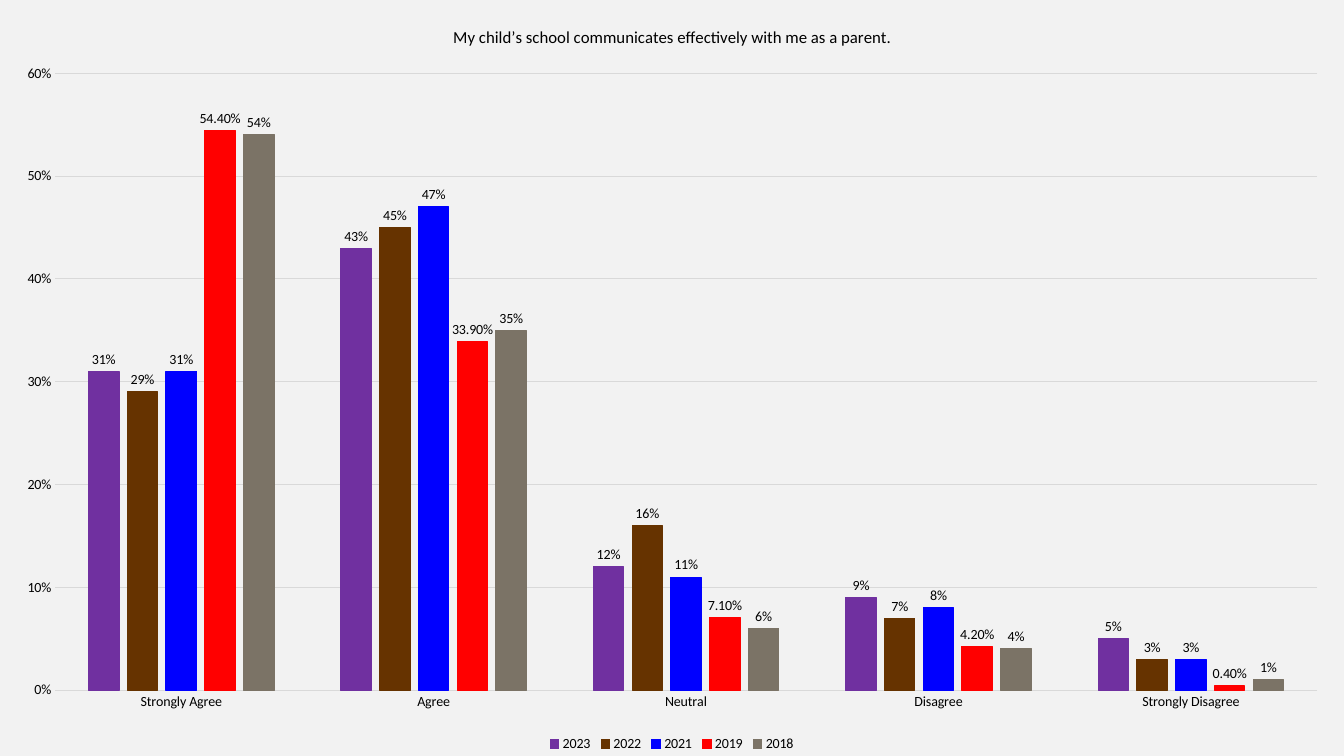
import pptx
import pptx.chart.data
import pptx.dml.color
import pptx.enum.chart
import pptx.oxml
import pptx.oxml.ns
import pptx.util
from pptx.util import Inches

RGBColor = pptx.dml.color.RGBColor
BACKGROUND = RGBColor(0xF2, 0xF2, 0xF2)
BLACK = RGBColor(0x00, 0x00, 0x00)
GRID = RGBColor(0xD9, 0xD9, 0xD9)
PURPLE = RGBColor(0x70, 0x30, 0xA0)
BROWN = RGBColor(0x66, 0x33, 0x00)
BLUE = RGBColor(0x00, 0x00, 0xFF)
RED = RGBColor(0xFF, 0x00, 0x00)
TAUPE = RGBColor(0x7B, 0x73, 0x66)

QUESTION = "My child’s school communicates effectively with me as a parent."
ANSWERS = ["Strongly Agree", "Agree", "Neutral", "Disagree", "Strongly Disagree"]
# Year, share of each answer, colour, label format
YEARS = [
    ("2023", [0.31, 0.43, 0.12, 0.09, 0.05], PURPLE, "0%"),
    ("2022", [0.29, 0.45, 0.16, 0.07, 0.03], BROWN, "0%"),
    ("2021", [0.31, 0.47, 0.11, 0.08, 0.03], BLUE, "0%"),
    ("2019", [0.544, 0.339, 0.071, 0.042, 0.004], RED, "0.00%"),
    ("2018", [0.54, 0.35, 0.06, 0.04, 0.01], TAUPE, "0%"),
]


def format_font(font, size=10, color=BLACK, bold=False):
    font.name = "Calibri"
    font.size = pptx.util.Pt(size)
    font.bold = bold
    font.color.rgb = color


def write_text(frame, text, **font_format):
    run = frame.paragraphs[0].add_run()
    run.text = text
    format_font(run.font, **font_format)


def format_line(line, color):
    line.color.rgb = color
    line.width = pptx.util.Pt(0.75)


def place(part, index, inner=False, **fractions):
    """Put a chart part at fractions (x, y, w, h) of the chart area."""
    qn = pptx.oxml.ns.qn
    for previous in part.findall(qn("c:layout")):
        part.remove(previous)
    target = '<c:layoutTarget val="inner"/>' if inner else ""
    modes = "".join(f'<c:{key}Mode val="edge"/>' for key in "xy")
    values = "".join(f'<c:{key} val="{value}"/>' for key, value in fractions.items())
    part.insert(index, pptx.oxml.parse_xml(
        f'<c:layout {pptx.oxml.ns.nsdecls("c")}><c:manualLayout>'
        f"{target}{modes}{values}</c:manualLayout></c:layout>"))


def add_survey_chart(slide, width, height):
    survey = pptx.chart.data.CategoryChartData(number_format="0%")
    survey.categories = ANSWERS
    for year, shares, _, _ in YEARS:
        survey.add_series(year, shares)
    chart = slide.shapes.add_chart(
        pptx.enum.chart.XL_CHART_TYPE.COLUMN_CLUSTERED,
        0, 0, width, height, survey).chart
    format_font(chart.font)
    return chart


def format_title(chart):
    chart.has_title = True
    write_text(chart.chart_title.text_frame, QUESTION, size=12)
    chart.chart_title.include_in_layout = False
    place(chart.chart_title._element, 1, x=0.335, y=0.03)


def format_axes(chart):
    for axis in (chart.category_axis, chart.value_axis):
        axis.major_tick_mark = pptx.enum.chart.XL_TICK_MARK.NONE
        axis.minor_tick_mark = pptx.enum.chart.XL_TICK_MARK.NONE
        format_font(axis.tick_labels.font)
    format_line(chart.category_axis.format.line, GRID)
    shares = chart.value_axis
    shares.minimum_scale, shares.maximum_scale, shares.major_unit = 0, 0.6, 0.1
    shares.format.line.fill.background()
    shares.has_major_gridlines = True
    format_line(shares.major_gridlines.format.line, GRID)
    shares.tick_labels.number_format = "0%"
    shares.tick_labels.number_format_is_linked = False


def format_columns(chart):
    plot = chart.plots[0]
    plot.gap_width = 219
    plot.overlap = -27
    plot.vary_by_categories = False
    for columns, (_, _, color, label_format) in zip(plot.series, YEARS):
        columns.format.fill.solid()
        columns.format.fill.fore_color.rgb = color
        format_line(columns.format.line, color)
        labels = columns.data_labels
        labels.show_value = True
        labels.position = pptx.enum.chart.XL_LABEL_POSITION.OUTSIDE_END
        labels.number_format = label_format
        labels.number_format_is_linked = False
        format_font(labels.font)
    place(chart._chartSpace.chart.plotArea, 0, inner=True,
          x=0.041, y=0.097, w=0.939, h=0.816)


def format_legend(chart):
    chart.has_legend = True
    chart.legend.position = pptx.enum.chart.XL_LEGEND_POSITION.BOTTOM
    chart.legend.include_in_layout = False
    format_font(chart.legend.font)
    place(chart.legend._element, 1, x=0.405, y=0.968, w=0.19, h=0.032)


def main():
    deck = pptx.Presentation()
    deck.slide_width, deck.slide_height = Inches(13.33), Inches(7.5)
    slide = deck.slides.add_slide(deck.slide_layouts[6])
    slide.background.fill.solid()
    slide.background.fill.fore_color.rgb = BACKGROUND
    chart = add_survey_chart(slide, deck.slide_width, deck.slide_height)
    format_title(chart)
    format_axes(chart)
    format_columns(chart)
    format_legend(chart)
    deck.save("out.pptx")


if __name__ == "__main__":
    main()
